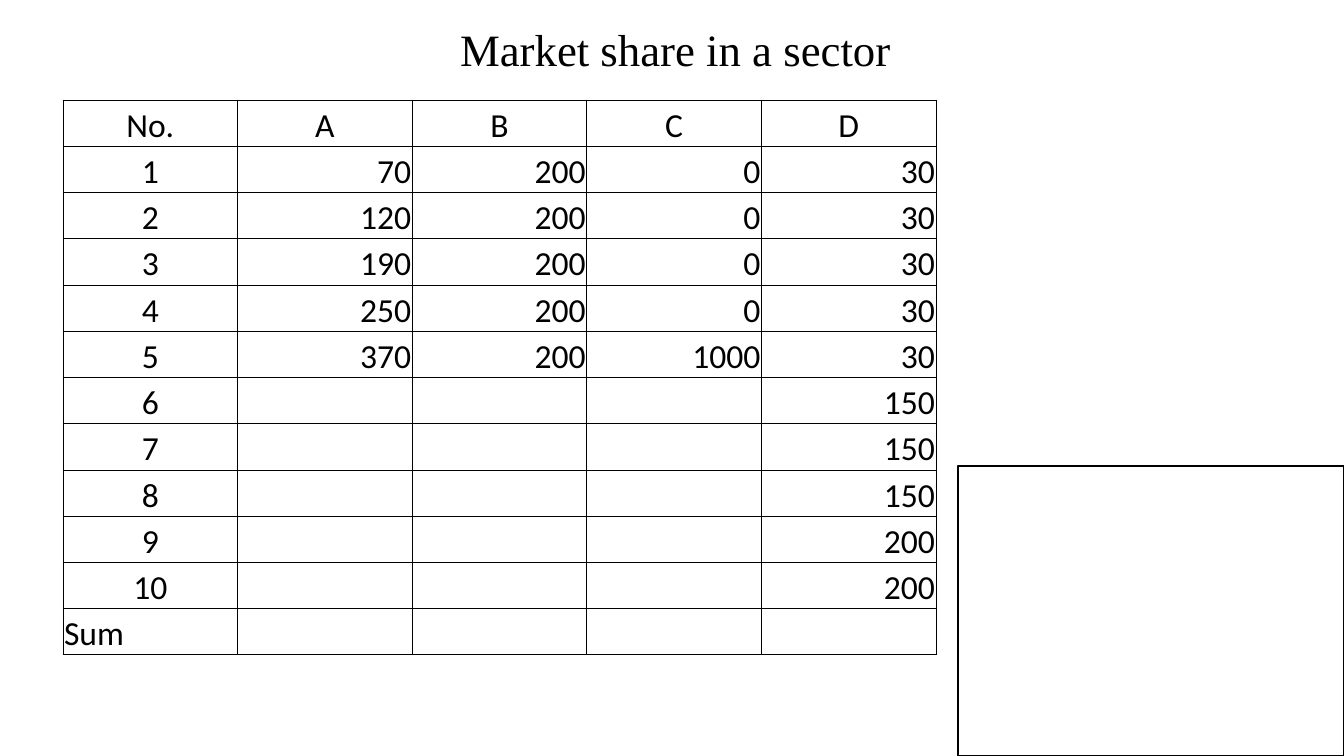
from pptx import Presentation
from pptx import util as u
from pptx.dml.color import RGBColor
from pptx.enum import shapes, text
from pptx.oxml import parse_xml
from pptx.oxml.ns import nsdecls

BLACK = RGBColor(0, 0, 0)
WIDE, HIGH = 1344, 756
SCALE = 12192000 / WIDE
LEFT, MID, RIGHT = text.PP_ALIGN.LEFT, text.PP_ALIGN.CENTER, text.PP_ALIGN.RIGHT

SHARES = {
    "A": [70, 120, 190, 250, 370],
    "B": [200] * 5,
    "C": [0] * 4 + [1000],
    "D": [30] * 5 + [150] * 3 + [200] * 2,
}
FIRMS = 10


def px(num):
    return u.Emu(round(num * SCALE))


class Page:
    """Holds the fonts and the slide that is being built."""

    serif, sans = "Times New Roman", "Calibri"

    def __init__(self, deck):
        self.slide = deck.slides.add_slide(deck.slide_layouts[6])

    def label(self, para, words, size, font, align):
        para.alignment = align
        run = para.add_run()
        run.text = words
        run.font.size = u.Pt(size)
        run.font.name = font
        run.font.color.rgb = BLACK

    def title(self, words, *box):
        frame = self.slide.shapes.add_textbox(*map(px, box)).text_frame
        frame.word_wrap = True
        frame.vertical_anchor = text.MSO_ANCHOR.MIDDLE
        self.label(frame.paragraphs[0], words, 32, self.serif, MID)

    def rect(self, *box):
        kind = shapes.MSO_SHAPE.RECTANGLE
        shape = self.slide.shapes.add_shape(kind, *map(px, box))
        shape.shadow.inherit = False
        shape.fill.background()
        shape.line.color.rgb = BLACK
        shape.line.width = u.Pt(1)

    def border(self, cell):
        """Draw a thin black line on all four sides of a cell."""
        props = cell._tc.get_or_add_tcPr()
        for spot, side in enumerate("LRTB"):
            props.insert(spot, parse_xml(
                f'<a:ln{side} {nsdecls("a")} w="{u.Pt(0.5)}"><a:solidFill>'
                f'<a:srgbClr val="{BLACK}"/></a:solidFill></a:ln{side}>'))

    def table(self, rows, *box):
        """Draw an even grid from rows of (words, alignment) pairs."""
        wide, high = len(rows[0]), len(rows)
        grid = self.slide.shapes.add_table(high, wide, *map(px, box)).table
        grid.first_row = grid.horz_banding = False
        for col in grid.columns:
            col.width = px(box[2] / wide)
        for row, line in zip(grid.rows, rows):
            row.height = px(box[3] / high)
            for cell, (words, align) in zip(row.cells, line):
                cell.fill.background()
                self.border(cell)
                cell.margin_left = cell.margin_right = cell.margin_top = px(1)
                cell.margin_bottom = 0
                cell.vertical_anchor = text.MSO_ANCHOR.BOTTOM
                if words:
                    self.label(cell.text_frame.paragraphs[0], words, 24,
                               self.sans, align)


def lines():
    """Make the head, one line per firm, and the sum line."""
    rows = [[(name, MID) for name in ["No.", *SHARES]]]
    for num in range(FIRMS):
        vals = [str(col[num]) if num < len(col) else "" for col in SHARES.values()]
        rows.append([(str(num + 1), MID)] + [(val, RIGHT) for val in vals])
    rows.append([("Sum", LEFT)] + [("", RIGHT)] * len(SHARES))
    return rows


def main():
    deck = Presentation()
    deck.slide_width, deck.slide_height = px(WIDE), px(HIGH)
    page = Page(deck)
    page.title("Market share in a sector", 187, 13, 977, 71)
    page.table(lines(), 63, 100, 873, 555)
    page.rect(958, 466, 386, 290)
    deck.save("out.pptx")


if __name__ == "__main__":
    main()
